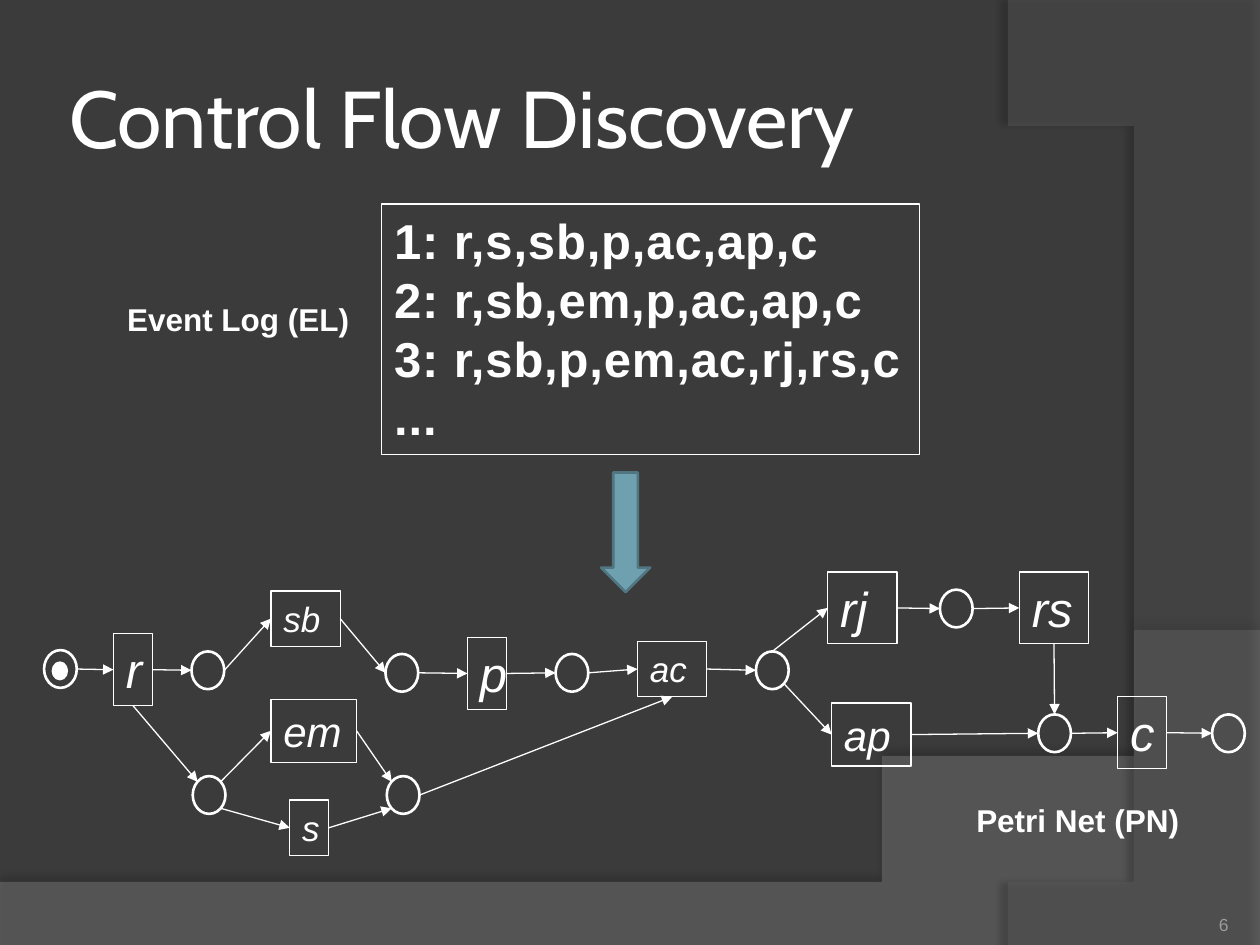
from pptx import Presentation
from pptx.dml.color import RGBColor
from pptx.enum.shapes import MSO_CONNECTOR, MSO_SHAPE
from pptx.enum.text import MSO_ANCHOR, PP_ALIGN
from pptx.oxml.ns import qn
from pptx.util import Inches, Pt
from lxml.etree import SubElement

WHITE = "FFFFFF"
SIDES = {"N": (0.5, 0), "E": (1, 0.5), "S": (0.5, 1), "W": (0, 0.5),
         "NE": (0.85, 0.15), "SE": (0.85, 0.85), "SW": (0.15, 0.85), "NW": (0.15, 0.15)}
PLACES = {"start": (0.35, 5.16), "sent": (1.52, 5.17), "split": (1.53, 6.16),
          "ready": (3.06, 5.19), "join": (3.07, 6.16), "paid": (4.41, 5.19),
          "choice": (6, 5.17), "reject": (7.46, 4.68), "merge": (8.24, 5.67), "end": (9.62, 5.67)}
TASKS = {"r": (0.9, 5.03, 0.31, 28), "sb": (2.15, 4.69, 0.55, 20), "em": (2.15, 5.55, 0.68, 24),
         "s": (2.3, 6.35, 0.31, 20), "p": (3.71, 5.06, 0.31, 28), "ac": (5.06, 5.09, 0.55, 20),
         "rj": (6.57, 4.54, 0.55, 28), "rs": (8.09, 4.54, 0.55, 28), "ap": (6.6, 5.58, 0.63, 24),
         "c": (8.87, 5.53, 0.39, 28)}
HEIGHTS = {20: 0.44, 24: 0.5, 28: 0.57}
CHAINS = ["start r sent sb ready p paid ac choice", "rj reject rs", "ap merge c end"]
BENDS = [("r", "S", "split", "NW"), ("split", "NE", "em", "W"), ("split", "SE", "s", "W"),
         ("em", "E", "join", "NW"), ("s", "E", "join", "SW"), ("join", "E", "ac", "S"),
         ("choice", "N", "rj", "W"), ("choice", "SE", "ap", "W"), ("rs", "S", "merge", "N")]
LOG = "1: r,s,sb,p,ac,ap,c\n2: r,sb,em,p,ac,ap,c\n3: r,sb,p,em,ac,rj,rs,c\n..."


def color(code):
    """Turn a hex string into a colour."""
    return RGBColor.from_string(code)


def write(shape, text, size, font="Arial", ink=WHITE, bold=False, italic=False,
          align=PP_ALIGN.LEFT, anchor=MSO_ANCHOR.TOP, wrap=True, inset=None, track=0):
    """Put formatted text into a shape, one paragraph per line."""
    frame = shape.text_frame
    frame.word_wrap = wrap
    frame.vertical_anchor = anchor
    if inset is not None:
        frame.margin_left = frame.margin_right = Inches(inset)
        frame.margin_top = frame.margin_bottom = Inches(inset)
    frame.text = text
    for para in frame.paragraphs:
        para.alignment = align
        face = para.runs[0].font
        face.name, face.size = font, Pt(size)
        face.bold, face.italic = bold, italic
        face.color.rgb = color(ink)
        if track:
            para.runs[0]._r.get_or_add_rPr().set("spc", str(track))


def label(slide, box, text, size, **style):
    """Add a text box."""
    write(slide.shapes.add_textbox(*map(Inches, box)), text, size, **style)


def draw(slide, kind, box, fill=None, line=WHITE, width=0.75):
    """Add a preset shape with a plain outline."""
    shape = slide.shapes.add_shape(kind, *map(Inches, box))
    shape.shadow.inherit = False
    if fill:
        shape.fill.solid()
        shape.fill.fore_color.rgb = color(fill)
    else:
        shape.fill.background()
    shape.line.color.rgb = color(line)
    shape.line.width = Pt(width)
    return shape


def bezier(start, one, two, end, steps=60):
    """List the points along a cubic curve."""
    points = []
    for step in range(steps + 1):
        t = step / steps
        parts = ((1 - t) ** 3, 3 * t * (1 - t) ** 2, 3 * t * t * (1 - t), t ** 3)
        points.append(tuple(sum(part * spot[axis] for part, spot in zip(parts, (start, one, two, end)))
                            for axis in (0, 1)))
    return points


def sweep(slide, points, fill, alpha, shade, dist, angle):
    """Add a translucent background area with a soft shadow."""
    pen = slide.shapes.build_freeform(*points[0], scale=Inches(1))
    pen.add_line_segments(points[1:], close=True)
    shape = pen.convert_to_shape()
    shape.shadow.inherit = False
    shape.line.fill.background()
    shape.fill.solid()
    shape.fill.fore_color.rgb = color(fill)
    tint = shape._element.spPr.find(qn("a:solidFill"))[0]
    SubElement(tint, qn("a:alpha"), val=str(alpha * 1000))
    blur = SubElement(shape._element.spPr.find(qn("a:effectLst")), qn("a:outerShdw"),
                      blurRad=str(Pt(4)), dist=str(Pt(dist)), dir=str(angle * 60000),
                      algn="ctr", rotWithShape="0")
    black = SubElement(blur, qn("a:srgbClr"), val="000000")
    SubElement(black, qn("a:alpha"), val=str(shade * 1000))


def site(shape, side):
    """Find the point on a named side of a shape."""
    across, down = SIDES[side]
    return int(shape.left + across * shape.width), int(shape.top + down * shape.height)


def link(slide, first, out, last, into):
    """Draw an arrow between the sides of two nodes."""
    wire = slide.shapes.add_connector(MSO_CONNECTOR.STRAIGHT, *site(first, out), *site(last, into))
    wire.line.color.rgb = color(WHITE)
    wire.line.width = Pt(0.75)
    SubElement(wire.line._get_or_add_ln(), qn("a:tailEnd"), type="triangle")
    SubElement(wire._element.spPr, qn("a:effectLst"))


def net(slide):
    """Draw the Petri net."""
    nodes = {}
    for name, (left, top) in PLACES.items():
        nodes[name] = draw(slide, MSO_SHAPE.OVAL, (left, top, 0.26, 0.3), width=1.5)
    for name, (left, top, wide, size) in TASKS.items():
        nodes[name] = draw(slide, MSO_SHAPE.RECTANGLE, (left, top, wide, HEIGHTS[size]))
        write(nodes[name], name, size, italic=True)
    for chain in CHAINS:
        names = chain.split()
        for first, last in zip(names, names[1:]):
            link(slide, nodes[first], "E", nodes[last], "W")
    for first, out, last, into in BENDS:
        link(slide, nodes[first], out, nodes[last], into)
    draw(slide, MSO_SHAPE.OVAL, (0.42, 5.26, 0.11, 0.13), fill=WHITE, width=1.5)


def main():
    """Build and save the slide."""
    deck = Presentation()
    deck.slide_width, deck.slide_height = Inches(10), Inches(7.5)
    slide = deck.slides.add_slide(deck.slide_layouts[6])
    slide.background.fill.solid()
    slide.background.fill.fore_color.rgb = color("3B3B3B")
    floor = bezier((10, 5.2), (5.59, 7.29), (3.91, 7.19), (0, 7.05))
    sweep(slide, [(0, 7.51), (10, 7.51)] + floor, "7F7F7F", 45, 35, 3.5, 270)
    wall = bezier((8.21, 7.5), (9.35, 6.19), (10.18, 3), (8, 0))
    sweep(slide, [(10, 0.02), (10, 7.5)] + wall, "5E5E5E", 40, 45, 4, 180)
    label(slide, (0.5, 0.3, 8.17, 1.25), "Control Flow Discovery", 46, font="Cabin",
          anchor=MSO_ANCHOR.MIDDLE, inset=0.05)
    log = draw(slide, MSO_SHAPE.RECTANGLE, (3.03, 1.62, 4.27, 1.99))
    write(log, LOG, 28, ink="FEFEFE", bold=True, wrap=False, track=50)
    draw(slide, MSO_SHAPE.DOWN_ARROW, (4.77, 3.75, 0.39, 0.95), fill="6EA0B0", line="517682", width=1.5)
    net(slide)
    label(slide, (0.91, 2.33, 1.98, 0.4), "Event Log (EL)", 18, bold=True, wrap=False)
    label(slide, (7.65, 6.31, 1.83, 0.4), "Petri Net (PN)", 18, bold=True, wrap=False)
    label(slide, (8.92, 7.02, 0.83, 0.4), "6", 10, ink="9D9B9A", align=PP_ALIGN.RIGHT,
          anchor=MSO_ANCHOR.BOTTOM, inset=0)
    deck.save("out.pptx")


if __name__ == "__main__":
    main()
